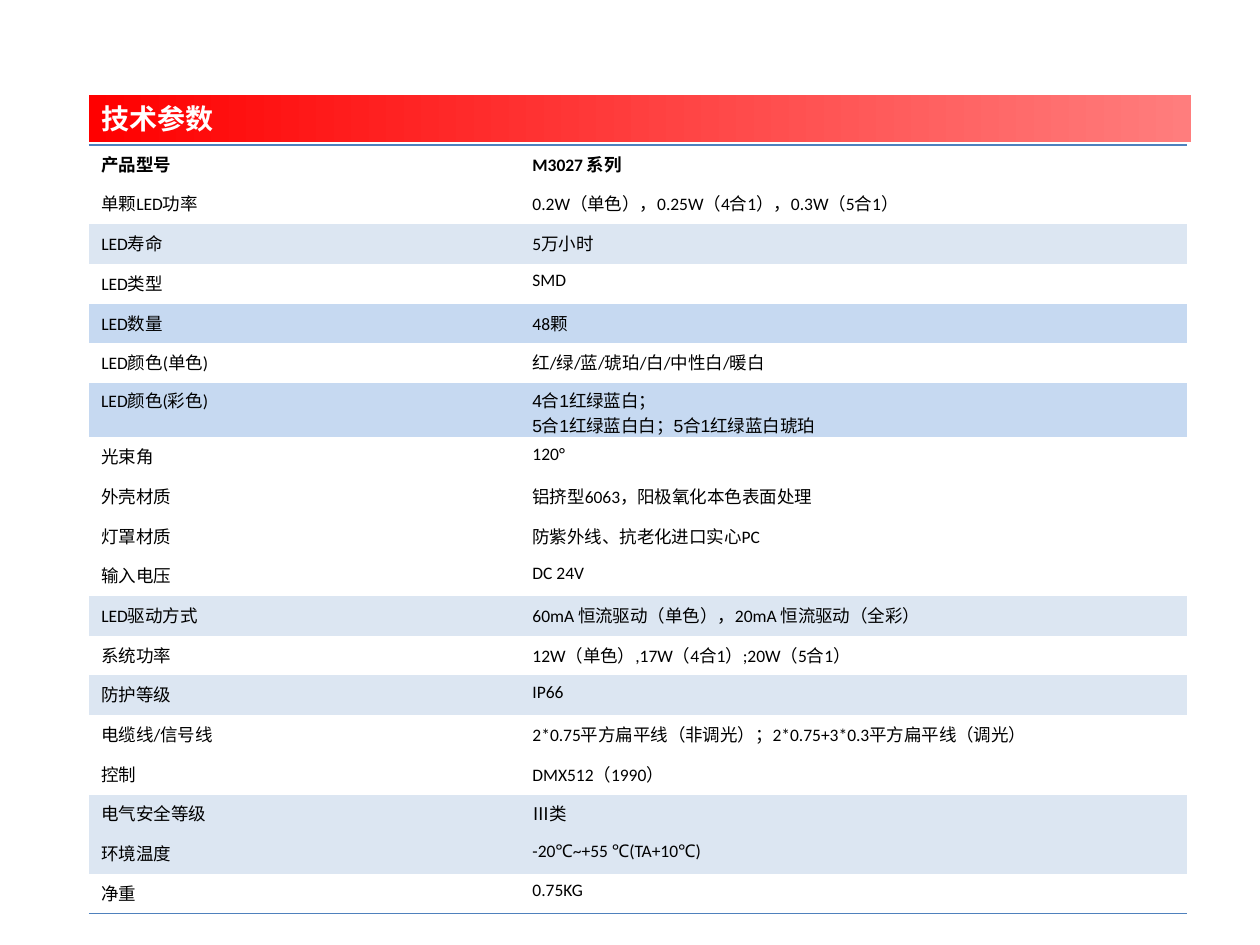
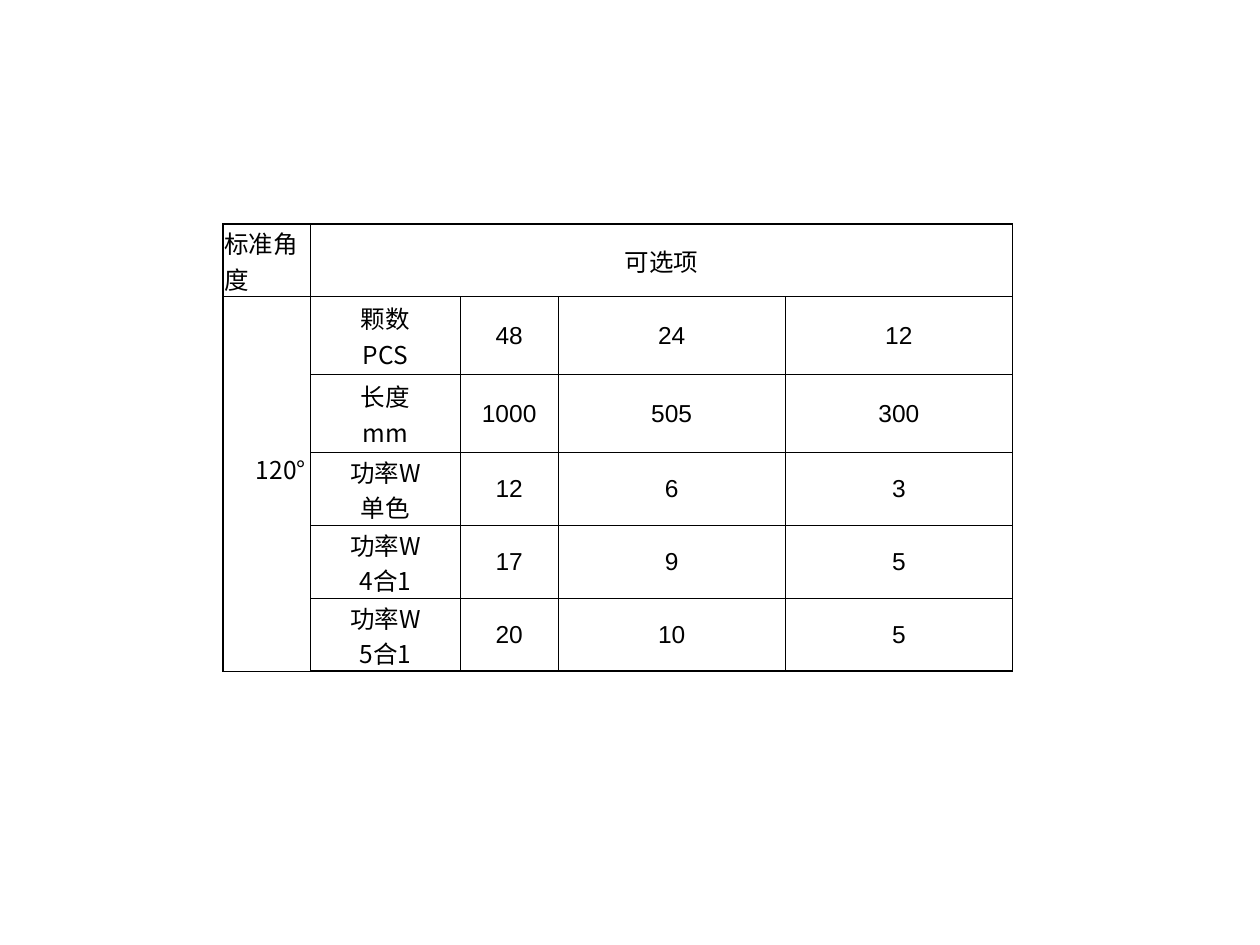
from dataclasses import dataclass

from lxml import etree
from pptx import Presentation
from pptx import util as u
from pptx.dml.color import RGBColor
from pptx.enum import text
from pptx.oxml import ns

BLACK, WHITE = "000000", "FFFFFF"
RED, PALE_RED = "FF0000", "FF7D7D"
RULE_BLUE, BAND_BLUE, PALE_BLUE = "4F81BD", "C6D9F1", "DCE6F2"
CJK_FONT = "Noto Sans CJK SC"
NO_STYLE = "{2D5ABB26-0587-4C30-8999-92F81FD0307C}"


@dataclass
class Spec:
    name: str
    value: str
    fill: str | None = None
    font: str = "Calibri"


@dataclass
class Option:
    name: str
    values: tuple[str, str, str]
    height: float


SPECS = [
    Spec("产品型号", "M3027 系列"),
    Spec("单颗LED功率", "0.2W（单色），0.25W（4合1），0.3W（5合1）"),
    Spec("LED寿命", "5万小时", PALE_BLUE),
    Spec("LED类型", "SMD"),
    Spec("LED数量", "48颗", BAND_BLUE),
    Spec("LED颜色(单色)", "红/绿/蓝/琥珀/白/中性白/暖白"),
    Spec("LED颜色(彩色)", "4合1红绿蓝白；\n5合1红绿蓝白白；5合1红绿蓝白琥珀", BAND_BLUE, "Arial"),
    Spec("光束角", "120°"),
    Spec("外壳材质", "铝挤型6063，阳极氧化本色表面处理"),
    Spec("灯罩材质", "防紫外线、抗老化进口实心PC"),
    Spec("输入电压", "DC 24V"),
    Spec("LED驱动方式", "60mA 恒流驱动（单色），20mA 恒流驱动（全彩）", PALE_BLUE),
    Spec("系统功率", "12W（单色）,17W（4合1）;20W（5合1）"),
    Spec("防护等级", "IP66", PALE_BLUE),
    Spec("电缆线/信号线", "2*0.75平方扁平线（非调光）；2*0.75+3*0.3平方扁平线（调光）"),
    Spec("控制", "DMX512（1990）"),
    Spec("电气安全等级", "Ⅲ类", PALE_BLUE),
    Spec("环境温度", "-20℃~+55 ℃(TA+10℃)", PALE_BLUE),
    Spec("净重", "0.75KG"),
]

OPTIONS = [
    Option("颗数\nPCS", ("48", "24", "12"), 1.57),
    Option("长度\nmm", ("1000", "505", "300"), 1.57),
    Option("功率W\n单色", ("12", "6", "3"), 1.47),
    Option("功率W\n4合1", ("17", "9", "5"), 1.47),
    Option("功率W\n5合1", ("20", "10", "5"), 1.47),
]


def color(value: str) -> RGBColor:
    return RGBColor.from_string(value)


def write(frame, content: str, *, size: float, font: str, fill: str = BLACK,
          bold: bool = False, align=text.PP_ALIGN.LEFT) -> None:
    """Fill a text frame, one paragraph for each line of content."""
    for index, line in enumerate(content.split("\n")):
        para = frame.add_paragraph() if index else frame.paragraphs[0]
        para.alignment = align
        para.space_before = u.Pt(0)
        span = para.add_run()
        span.text = line
        span.font.size = u.Pt(size)
        span.font.bold = bold
        span.font.color.rgb = color(fill)
        span.font.name = font
        east = etree.SubElement(span.font._element, ns.qn("a:ea"))
        east.set("typeface", CJK_FONT)


def set_borders(cell, line_color: str, **widths: float) -> None:
    """Draw cell borders; widths in points, keyed L, R, T, B."""
    properties = cell._tc.get_or_add_tcPr()
    for side in "LRTB":
        if side in widths:
            line = etree.SubElement(properties, ns.qn(f"a:ln{side}"),
                                    w=str(u.Pt(widths[side])))
            solid = etree.SubElement(line, ns.qn("a:solidFill"))
            etree.SubElement(solid, ns.qn("a:srgbClr"), val=line_color)


def set_fill(cell, value: str | None) -> None:
    if value:
        cell.fill.solid()
        cell.fill.fore_color.rgb = color(value)
    else:
        cell.fill.background()


def set_margins(cell, left: float, top: float, right: float, bottom: float) -> None:
    cell.margin_left, cell.margin_top = u.Cm(left), u.Cm(top)
    cell.margin_right, cell.margin_bottom = u.Cm(right), u.Cm(bottom)


def add_plain_table(page, left: float, top: float, widths: list[float],
                    heights: list[float]):
    frame = page.shapes.add_table(len(heights), len(widths), u.Cm(left), u.Cm(top),
                                  u.Cm(sum(widths)), u.Cm(sum(heights)))
    table = frame.table
    table.first_row = table.horz_banding = False
    table._tbl.tblPr.find(ns.qn("a:tableStyleId")).text = NO_STYLE
    for column, width in zip(table.columns, widths):
        column.width = u.Cm(width)
    for row, height in zip(table.rows, heights):
        row.height = u.Cm(height)
    return table


def add_title_band(page, title: str) -> None:
    box = page.shapes.title
    box.left, box.top = u.Cm(1.79), u.Cm(1.92)
    box.width, box.height = u.Cm(22.22), u.Cm(0.94)
    box.fill.gradient()
    box.fill.gradient_angle = 0
    for stop, position, value in zip(box.fill.gradient_stops, (0, 1), (RED, PALE_RED)):
        stop.position = position
        stop.color.rgb = color(value)
    frame = box.text_frame
    frame.word_wrap = True
    frame.auto_size = text.MSO_AUTO_SIZE.NONE
    frame.vertical_anchor = text.MSO_ANCHOR.MIDDLE
    write(frame, title, size=16, font="Arial", fill=WHITE, bold=True)


def build_specs(deck) -> None:
    page = deck.slides.add_slide(deck.slide_layouts[5])
    add_title_band(page, "技术参数")
    heights = [1.09 if "\n" in spec.value else 0.8 for spec in SPECS]
    table = add_plain_table(page, 1.79, 2.92, [8.69, 13.44], heights)
    last = len(SPECS) - 1
    for row, spec in enumerate(SPECS):
        for column, content in enumerate((spec.name, spec.value)):
            cell = table.cell(row, column)
            if row == 0:
                set_borders(cell, RULE_BLUE, T=1)
            elif row == last:
                set_borders(cell, RULE_BLUE, B=1)
            set_fill(cell, spec.fill)
            if "\n" in spec.value:
                set_margins(cell, 0.25, 0.08, 0.25, 0)
            write(cell.text_frame, content, size=10, bold=row == 0,
                  font=spec.font if column else "Calibri")


def build_options(deck) -> None:
    page = deck.slides.add_slide(deck.slide_layouts[6])
    heights = [1.43] + [option.height for option in OPTIONS]
    widths = [1.76, 3.02, 1.97, 4.58, 4.58]
    table = add_plain_table(page, 4.5, 4.52, widths, heights)
    last = len(OPTIONS)
    for row in range(len(heights)):
        for column in range(len(widths)):
            cell = table.cell(row, column)
            set_borders(cell, BLACK, L=0.5 if column else 1, R=0.5,
                        T=0.5 if row else 1, B=1 if row == last else 0.5)
            set_fill(cell, WHITE if column else None)
            set_margins(cell, 0.02, 0.02, 0.02, 0)
            cell.vertical_anchor = text.MSO_ANCHOR.MIDDLE

    angle = table.cell(1, 0)
    table.cell(0, 1).merge(table.cell(0, len(widths) - 1))
    angle.merge(table.cell(last, 0))
    set_margins(angle, 0.66, 0.02, 0.02, 0.64)

    center = text.PP_ALIGN.CENTER
    write(table.cell(0, 0).text_frame, "标准角度", size=14, font=CJK_FONT)
    write(table.cell(0, 1).text_frame, "可选项", size=14, font=CJK_FONT, align=center)
    write(angle.text_frame, "120°", size=14, font=CJK_FONT)
    for row, option in enumerate(OPTIONS, 1):
        for column, content in enumerate((option.name, *option.values), 1):
            write(table.cell(row, column).text_frame, content, size=14, align=center,
                  font=CJK_FONT if column == 1 else "Arial")


def main() -> None:
    deck = Presentation()
    deck.slide_width, deck.slide_height = u.Cm(25.4), u.Cm(19.05)
    build_specs(deck)
    build_options(deck)
    deck.save("out.pptx")


if __name__ == "__main__":
    main()
